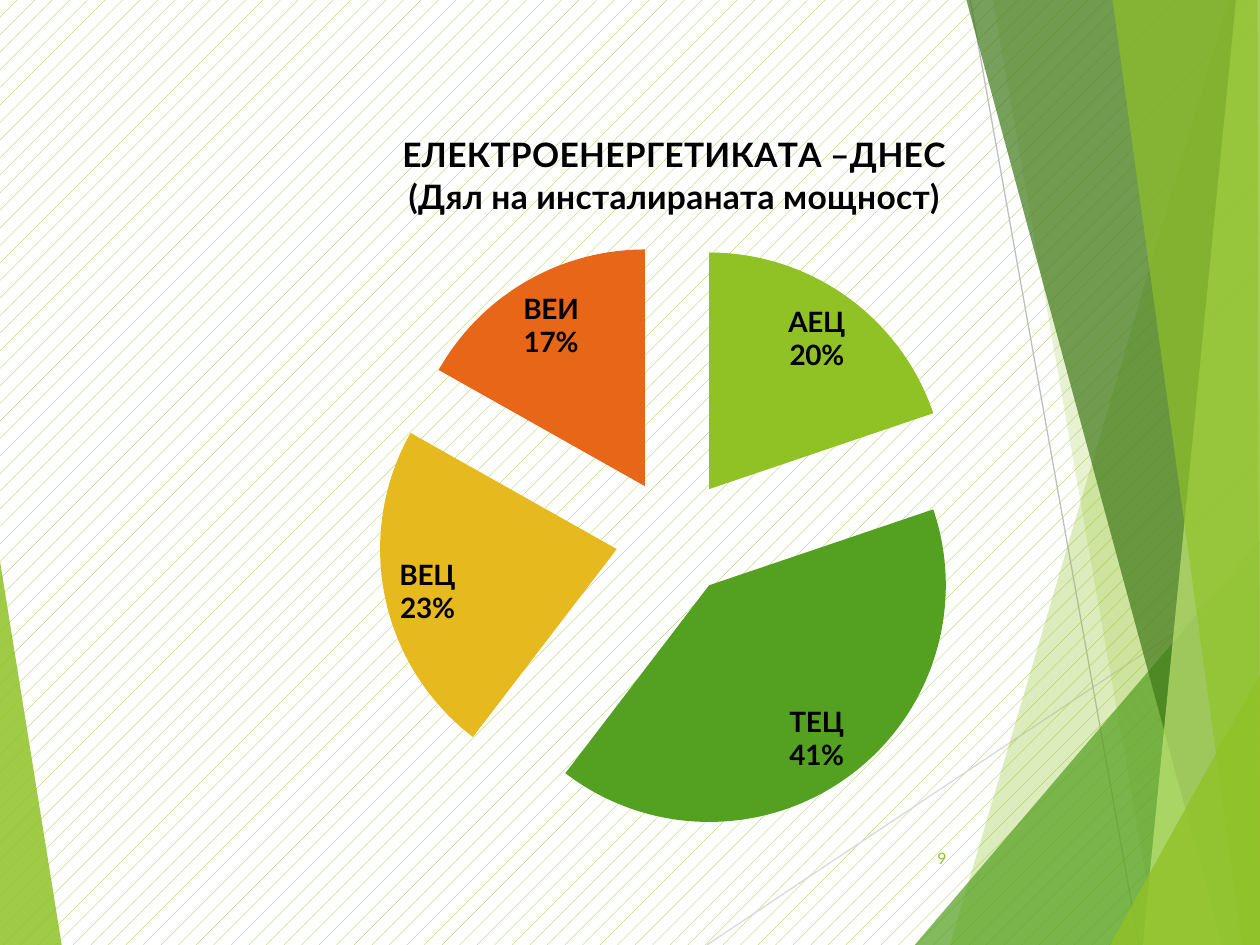
from dataclasses import dataclass

from lxml import etree
from pptx import Presentation
from pptx.chart.data import CategoryChartData
from pptx.dml.color import RGBColor
from pptx.enum.chart import XL_CHART_TYPE, XL_LABEL_POSITION
from pptx.enum.dml import MSO_PATTERN
from pptx.enum.shapes import MSO_CONNECTOR
from pptx.enum.text import MSO_ANCHOR, PP_ALIGN
from pptx.oxml.ns import qn
from pptx.util import Inches, Pt

PIE = XL_CHART_TYPE.PIE
BEST_FIT = XL_LABEL_POSITION.BEST_FIT
DOTS = MSO_PATTERN.PERCENT_5
STRAIGHT = MSO_CONNECTOR.STRAIGHT
MIDDLE = MSO_ANCHOR.MIDDLE
RIGHT = PP_ALIGN.RIGHT


@dataclass(frozen=True)
class Theme:
    """Colours, font and type sizes of the deck."""

    font: str = "Lato"
    lime: str = "90C226"
    green: str = "54A021"
    forest: str = "3F7819"
    pale: str = "C0E474"
    yellow: str = "E6B91E"
    orange: str = "E76618"
    light_gray: str = "D9D9D9"
    gray: str = "BFBFBF"
    black: str = "000000"
    white: str = "FFFFFF"
    title_size: float = 19.2
    label_size: int = 16
    number_size: int = 9


class SlideBuilder:
    """Draws styled elements on the current slide."""

    def __init__(self, slide, theme):
        self.slide = slide
        self.theme = theme

    def style_font(self, font, size, color, bold=False):
        """Apply the theme font with a size and colour."""
        font.name = self.theme.font
        font.size = Pt(size)
        font.bold = bold
        font.color.rgb = RGBColor.from_string(color)

    def background(self):
        """Fill the background with a fine pattern."""
        fill = self.slide.background.fill
        fill.patterned()
        fill.pattern = DOTS
        fill.fore_color.rgb = RGBColor.from_string(self.theme.lime)
        fill.back_color.rgb = RGBColor.from_string(self.theme.white)

    def facet(self, points, color, opacity):
        """Draw a translucent polygon without an outline."""
        corners = [(Inches(x), Inches(y)) for x, y in points]
        builder = self.slide.shapes.build_freeform(*corners[0])
        builder.add_line_segments(corners[1:], close=True)
        shape = builder.convert_to_shape()
        shape.shadow.inherit = False
        shape.line.fill.background()
        shape.fill.solid()
        shape.fill.fore_color.rgb = RGBColor.from_string(color)
        color_element = shape._element.spPr.find(qn("a:solidFill"))[0]
        etree.SubElement(color_element, qn("a:alpha"), val=str(opacity * 1000))

    def line(self, start, end, color):
        """Draw a thin straight line."""
        ends = [Inches(value) for value in (*start, *end)]
        connector = self.slide.shapes.add_connector(STRAIGHT, *ends)
        connector.line.color.rgb = RGBColor.from_string(color)
        connector.line.width = Pt(0.75)
        etree.SubElement(connector._element.spPr, qn("a:effectLst"))

    def page_number(self, text, box):
        """Write the page number, right-aligned."""
        shape = self.slide.shapes.add_textbox(*map(Inches, box))
        frame = shape.text_frame
        frame.word_wrap = True
        frame.vertical_anchor = MIDDLE
        frame.text = text
        paragraph = frame.paragraphs[0]
        paragraph.alignment = RIGHT
        self.style_font(paragraph.runs[0].font, self.theme.number_size, self.theme.lime)

    def exploded_pie(self, title, shares, box, explosion):
        """Draw a titled pie chart from (name, value, colour) rows."""
        theme = self.theme
        data = CategoryChartData()
        data.categories = [name for name, value, color in shares]
        data.add_series("Series 1", [value for name, value, color in shares])
        chart = self.slide.shapes.add_chart(PIE, *map(Inches, box), data).chart
        self.style_font(chart.font, theme.label_size, theme.black, bold=True)
        chart.has_legend = False
        chart.has_title = True
        frame = chart.chart_title.text_frame
        frame.text = title
        for paragraph in frame.paragraphs:
            self.style_font(paragraph.runs[0].font, theme.title_size, theme.black, bold=True)
        chart.plots[0].vary_by_categories = True
        series = chart.plots[0].series[0]
        element = etree.Element(qn("c:explosion"), val=str(explosion))
        series._element.find(qn("c:tx")).addnext(element)
        for index, (name, value, color) in enumerate(shares):
            fill = series.points[index].format.fill
            fill.solid()
            fill.fore_color.rgb = RGBColor.from_string(color)
        labels = series.data_labels
        labels.show_category_name = True
        labels.show_percentage = True
        labels.show_value = False
        labels.number_format = "0%"
        labels.number_format_is_linked = False
        labels.position = BEST_FIT
        self.style_font(labels.font, theme.label_size, theme.black, bold=True)
        separator = etree.Element(qn("c:separator"))
        separator.text = "\n"
        labels._element.find(qn("c:showBubbleSize")).addnext(separator)


def main():
    """Build and save the slide."""
    theme = Theme()
    presentation = Presentation()
    presentation.slide_width = Inches(10)
    presentation.slide_height = Inches(7.5)
    slide = presentation.slides.add_slide(presentation.slide_layouts[6])
    builder = SlideBuilder(slide, theme)
    builder.background()

    builder.facet([(-0.01, 4.39), (0.49, 7.5), (-0.01, 7.5)], theme.lime, 85)
    builder.line((5.61, 7.5), (10, 4.57), theme.light_gray)
    builder.line((7.7, 0), (9.04, 7.5), theme.gray)
    facets = [
        ([(9.75, 0), (7.54, 7.5), (10, 7.5), (10, 0)], theme.lime, 30),
        ([(7.88, 0), (9.19, 7.5), (10, 7.5), (10, 0)], theme.lime, 20),
        ([(7.26, 7.5), (10, 4.29), (10, 7.5)], theme.green, 72),
        ([(7.67, 0), (9.7, 7.5), (10, 7.5), (10, 0)], theme.forest, 70),
        ([(9.81, 0), (9.07, 7.5), (10, 7.5), (10, 0)], theme.pale, 70),
        ([(8.83, 0), (9.86, 7.5), (10, 7.5), (9.98, 0)], theme.lime, 65),
        ([(8.81, 7.5), (10, 5.35), (10, 7.5)], theme.lime, 80),
    ]
    for points, color, opacity in facets:
        builder.facet(points, color, opacity)

    builder.page_number("9", (7.05, 6.61, 0.56, 0.4))
    shares = [
        ("АЕЦ", 20, theme.lime),
        ("ТЕЦ", 41, theme.green),
        ("ВЕЦ", 23, theme.yellow),
        ("ВЕИ", 17, theme.orange),
    ]
    title = "ЕЛЕКТРОЕНЕРГЕТИКАТА –ДНЕС\n(Дял на инсталираната мощност)"
    builder.exploded_pie(title, shares, (1.38, 0.84, 7.95, 5.91), 25)
    presentation.save("out.pptx")


if __name__ == "__main__":
    main()
